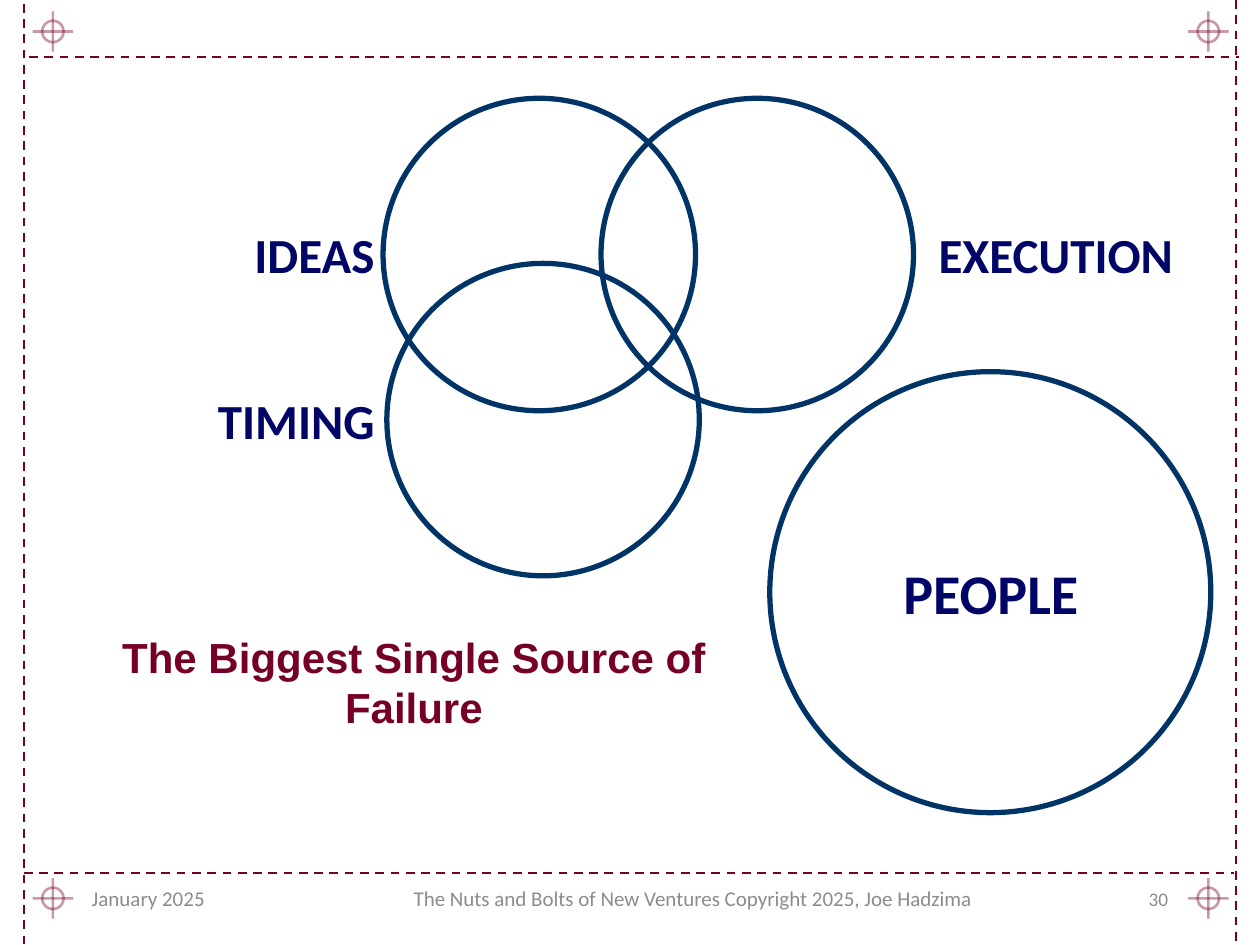
from lxml.etree import SubElement
from pptx import Presentation
from pptx.dml.color import RGBColor
from pptx.enum.dml import MSO_LINE_DASH_STYLE as Dash
from pptx.enum.shapes import MSO_CONNECTOR, MSO_SHAPE
from pptx.enum.text import MSO_ANCHOR as Anchor, PP_ALIGN as Align
from pptx.oxml.ns import qn
from pptx.util import Inches, Pt

WIDTH, HEIGHT = 10, 7.5
MAROON = RGBColor(0x76, 0x00, 0x25)
NAVY = RGBColor(0x00, 0x05, 0x66)
RING_BLUE = RGBColor(0x00, 0x33, 0x66)
GRAY = RGBColor(0x8C, 0x8C, 0x8C)

# Dashed crop lines: x1, y1, x2, y2
CROP_LINES = [
    (0.19, 0.03, 0.19, HEIGHT),
    (0.23, 0.45, 9.83, 0.45),
    (9.81, 0, 9.81, HEIGHT),
    (0.19, 6.93, 9.79, 6.93),
]

# Registration marks sit at every crossing of these centres
MARK_COLUMNS = (0.42, 9.59)
MARK_ROWS = (0.25, 7.13)
MARK_DIAMETER, MARK_ARM = 0.17, 0.16
MARK_OPACITY = 40

# Rings: left, top, diameter
SMALL, LARGE = 2.48, 3.5
RINGS = [
    (3.04, 0.78, SMALL),   # ideas
    (4.77, 0.78, SMALL),   # execution
    (3.07, 2.09, SMALL),   # timing
    (6.11, 2.95, LARGE),   # people
]

FOOTER = dict(size=Pt(12), name="Calibri", bold=False)
PAGE_NUMBER = dict(FOOTER, size=Pt(11))
LABEL = dict(size=Pt(28), name="Calibri", bold=True)
PEOPLE = dict(LABEL, size=Pt(32))
MESSAGE = dict(size=Pt(24), name="Arial", bold=True)

# Texts: wording, (left, top, width, height), alignment, anchor, font, colour
TEXTS = [
    ("January 2025", (0.63, 6.93, 2.33, 0.4), Align.LEFT, Anchor.MIDDLE, FOOTER, GRAY),
    ("The Nuts and Bolts of New Ventures Copyright 2025, Joe Hadzima",
     (2, 6.93, 7, 0.4), Align.CENTER, Anchor.MIDDLE, FOOTER, GRAY),
    ("30", (7.04, 6.93, 2.33, 0.4), Align.RIGHT, Anchor.MIDDLE, PAGE_NUMBER, GRAY),
    ("EXECUTION", (7.35, 1.73, 2.75, 0.57), Align.LEFT, Anchor.TOP, LABEL, NAVY),
    ("IDEAS", (1.53, 1.73, 1.54, 0.57), Align.RIGHT, Anchor.TOP, LABEL, NAVY),
    ("TIMING", (0.59, 3.05, 2.48, 0.57), Align.RIGHT, Anchor.TOP, LABEL, NAVY),
    ("PEOPLE", (6.78, 4.38, 2.17, 0.64), Align.CENTER, Anchor.TOP, PEOPLE, NAVY),
    ("The Biggest Single Source of Failure", (0.43, 4.96, 5.71, 0.91),
     Align.CENTER, Anchor.TOP, MESSAGE, MAROON),
]


def inches(values):
    return [Inches(value) for value in values]


def style_line(shape, color, weight, dash=None, opacity=None):
    shape.line.color.rgb = color
    shape.line.width = Pt(weight)
    if dash:
        shape.line.dash_style = dash
    if opacity:
        color_element = shape.line.fill._xPr.find(qn("a:solidFill"))[0]
        SubElement(color_element, qn("a:alpha"), val=str(opacity * 1000))


def add_line(shapes, ends, **line_format):
    line = shapes.add_connector(MSO_CONNECTOR.STRAIGHT, *inches(ends))
    style_line(line, **line_format)
    SubElement(line._element.spPr, qn("a:effectLst"))


def add_ring(shapes, left, top, diameter, **line_format):
    ring = shapes.add_shape(MSO_SHAPE.OVAL, *inches((left, top, diameter, diameter)))
    ring.shadow.inherit = False
    ring.fill.background()
    style_line(ring, **line_format)


def add_registration_mark(shapes, x, y):
    mark = shapes.add_group_shape().shapes
    pen = dict(color=MAROON, weight=1.5, opacity=MARK_OPACITY)
    radius = MARK_DIAMETER / 2
    add_ring(mark, x - radius, y - radius, MARK_DIAMETER, **pen)
    add_line(mark, (x, y - MARK_ARM, x, y + MARK_ARM), **pen)
    add_line(mark, (x + MARK_ARM, y, x - MARK_ARM, y), **pen)


def add_text(shapes, wording, box, alignment, anchor, font_format, color):
    frame = shapes.add_textbox(*inches(box)).text_frame
    frame.word_wrap = True
    frame.vertical_anchor = anchor
    paragraph = frame.paragraphs[0]
    paragraph.alignment = alignment
    run = paragraph.add_run()
    run.text = wording
    for attribute, value in font_format.items():
        setattr(run.font, attribute, value)
    run.font.color.rgb = color


def main():
    deck = Presentation()
    deck.slide_width, deck.slide_height = inches((WIDTH, HEIGHT))
    shapes = deck.slides.add_slide(deck.slide_layouts[6]).shapes

    for ends in CROP_LINES:
        add_line(shapes, ends, color=MAROON, weight=1.25, dash=Dash.DASH)
    for y in MARK_ROWS:
        for x in MARK_COLUMNS:
            add_registration_mark(shapes, x, y)
    for ring in RINGS:
        add_ring(shapes, *ring, color=RING_BLUE, weight=3)
    for text in TEXTS:
        add_text(shapes, *text)

    deck.save("out.pptx")


if __name__ == "__main__":
    main()
